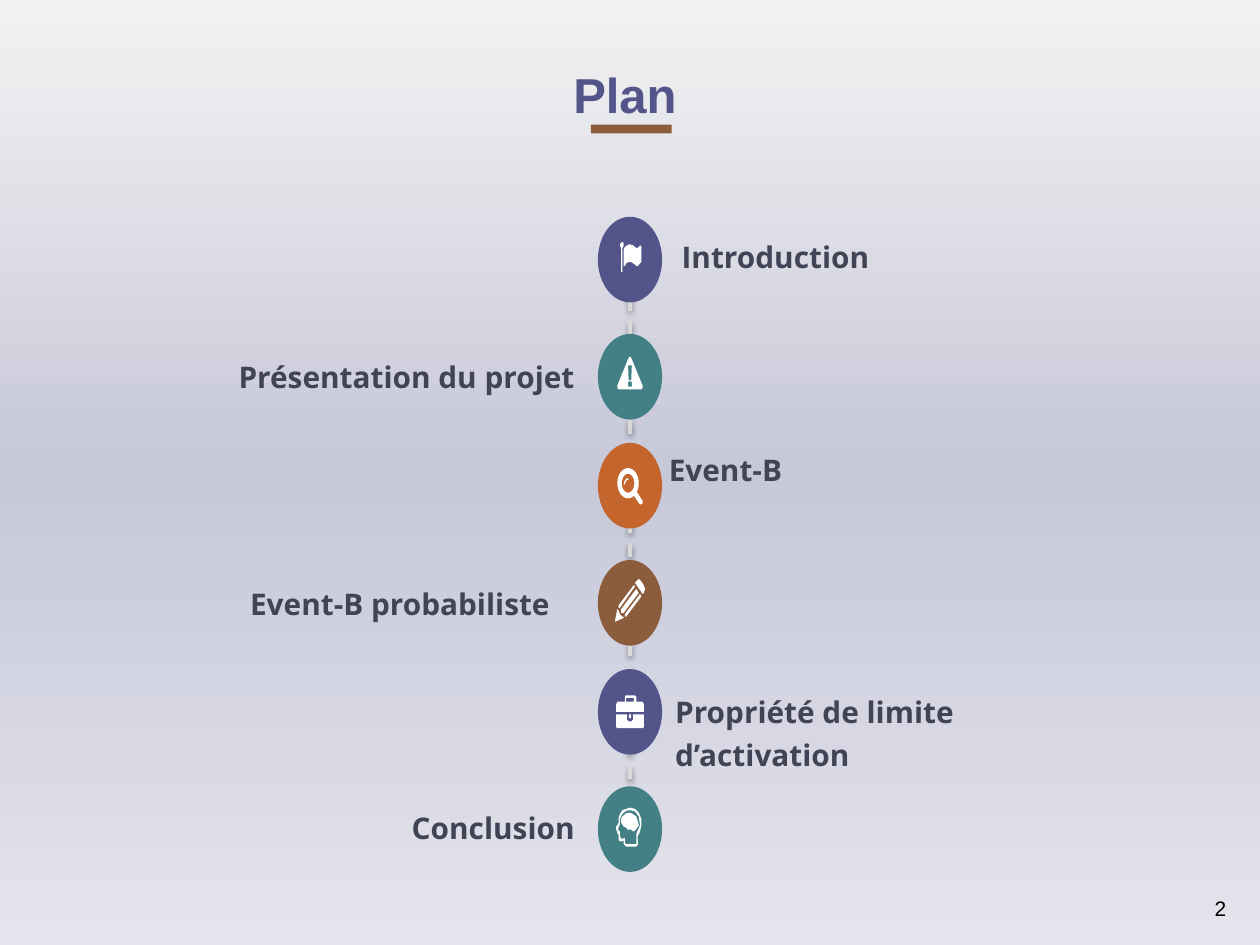
from copy import deepcopy
from dataclasses import dataclass
from math import cos, pi, sin

from lxml.etree import fromstring
from pptx import Presentation
from pptx.dml.color import RGBColor
from pptx.enum.dml import MSO_LINE
from pptx.enum.shapes import MSO_CONNECTOR, MSO_SHAPE
from pptx.enum.text import MSO_ANCHOR as Anchor, MSO_AUTO_SIZE as AutoSize, PP_ALIGN as Align
from pptx.util import Inches, Pt

Points = list[tuple[float, float]]


@dataclass(frozen=True)
class Theme:
    indigo: str = "53548A"
    teal: str = "438086"
    orange: str = "C4652D"
    brown: str = "8B5D3D"
    ink: str = "424456"
    rail: str = "D9D9D9"
    white: str = "FFFFFF"
    black: str = "000000"
    background: tuple = ((0, "F2F2F2"), (0.5, "C7C8D9"), (1, "E4E4EC"))
    heading_font: str = "Arial"
    label_font: str = "Open Sans"
    title_size: int = 28
    label_size: int = 17
    number_size: int = 12


@dataclass(frozen=True)
class Area:
    """A place on the grid of 100 columns by 75 rows."""
    column: float
    row: float
    columns: float
    rows: float

    def lengths(self) -> list[int]:
        return [grid(n) for n in (self.column, self.row, self.columns, self.rows)]


@dataclass(frozen=True)
class Step:
    text: str
    color: str
    area: Area
    align: Align
    icon: list[Points]


THEME = Theme()
CENTRE = 50
DISC_WIDTH, DISC_HEIGHT = 5.1, 6.8
FIRST_DISC, PAIR_PITCH, PARTNER_GAP = 17.2, 17.95, 9.3


def grid(cells: float) -> int:
    return Inches(cells / 10)


def rectangle(left: float, top: float, right: float, bottom: float) -> Points:
    return [(left, top), (right, top), (right, bottom), (left, bottom)]


def ellipse(x: float, y: float, x_radius: float, y_radius: float, count: int = 28) -> Points:
    angles = [2 * pi * i / count for i in range(count)]
    return [(x + x_radius * cos(a), y + y_radius * sin(a)) for a in angles]


# Icon outlines, in hundredths of an inch from the disc centre
FLAG = [
    [(-5, -11), (-6, -9), (-6, 10), (-7, 10), (-7, -9), (-8, -11), (-7.5, -13), (-6, -14), (-5, -13)],
    [(8, -11), (9, -11), (9, 2), (8, 3), (6.5, 5), (5, 5), (4, 4), (2.5, 3), (1, 2), (-1, 2),
     (-3, 3), (-4, 5), (-5, 5), (-5, -8), (-4, -10), (-1, -12), (0, -12), (2, -11.5),
     (4, -10), (5, -9), (6.5, -9.5)],
]
WARNING = [
    [(0, -16), (1, -15), (10, 7), (10, 9), (9, 10), (-9, 10), (-10, 9), (-10, 7), (-1, -15)],
    [(-1.5, -9), (1.5, -9), (1, 3), (-1, 3)],
    rectangle(-1.5, 4, 1.5, 8),
]
LENS = [
    ellipse(-1.5, -2, 8.5, 12),
    ellipse(-1.5, -2, 5, 7.5),
    [(3.3, 8.2), (5.7, 5.2), (10, 12), (10, 14), (8, 15)],
    [(-2, -6), (-1, -5), (-3, -4), (-4, -1), (-5, -1), (-4, -4.5)],
]
PENCIL = [
    [(11, -8), (10, -7), (4, -16), (5, -17), (7, -19), (9, -17), (11, -14), (12, -11)],
    [(-4, 9), (-4, 11), (-3, 11), (9, -5), (8, -7)],
    [(-9, 2), (-9, 4), (-8, 4), (4, -13), (3, -14)],
    [(5, -11), (-7, 5), (-7, 8), (-5, 8), (7, -8)],
    [(-5, 12), (-5, 11), (-6, 11), (-8, 9), (-9, 6), (-10, 5), (-12, 15)],
]
BRIEFCASE = [
    [(-11, 0), (-11, -6), (-10, -8), (-4, -8), (-4, -12), (-3.5, -13), (4, -13), (5, -12),
     (5, -8), (10, -8), (11, -6), (11, 0)],
    rectangle(-3, -11, 3, -8),
    [(11, 2), (11, 12), (10, 13), (-10, 13), (-11, 12), (-11, 2), (-2.5, 2), (-2.5, 6),
     (-1, 7.5), (1, 7.5), (2.5, 6), (2.5, 2)],
    rectangle(-1, 2, 1, 5),
]
HEAD = [
    [(7, -13), (4, -16), (0, -17), (-6, -15), (-8, -12), (-9, -9), (-9, -5), (-10, -3), (-11, -2),
     (-11, 0), (-10, 3), (-9, 5), (-9, 9), (-7, 10), (-5, 9), (-5, 12), (-3, 14), (5, 14),
     (6.5, 12), (6, 6), (8, 2), (9, -3), (9, -8)],
    [(8, -3), (5, 4), (5, 12), (-3, 12), (-4, 11), (-4, 7), (-7, 8), (-8, 5), (-8, 2), (-9, 1),
     (-9.5, 0), (-8, -4), (-8, -8), (-6, -12), (-3, -14.5), (0, -15), (4, -14), (7, -10)],
    [(2, -12), (0, -13), (-3, -12.5), (-6, -10), (-7, -8), (-7, -5), (-5, -2), (-3, -1), (-1, 1),
     (0, 0), (3, 2), (5, 0), (7, -3), (6, -7), (5, -10)],
]

STEPS = [
    Step("Introduction", THEME.indigo, Area(53.1, 16.2, 23.6, 8.3), Align.LEFT, FLAG),
    Step("Présentation du projet", THEME.teal, Area(16.9, 27.4, 29.7, 4.3), Align.RIGHT, WARNING),
    Step("Event-B", THEME.orange, Area(52.1, 34.8, 29.7, 4.1), Align.LEFT, LENS),
    Step("Event-B probabiliste", THEME.brown, Area(16.9, 45.4, 29.7, 4.1), Align.CENTER, PENCIL),
    Step("Propriété de limite d’activation", THEME.indigo, Area(52.6, 54, 29.7, 7.9), Align.LEFT, BRIEFCASE),
    Step("Conclusion", THEME.teal, Area(16.9, 63.2, 29.7, 4.1), Align.RIGHT, HEAD),
]


def paint(shape, color: str) -> None:
    shape.fill.solid()
    shape.fill.fore_color.rgb = RGBColor.from_string(color)
    shape.line.fill.background()
    shape.shadow.inherit = False


def write(box, area: Area, text: str, font: str, size: int, color: str, bold: bool = True,
          align: Align = Align.LEFT, anchor: Anchor = Anchor.TOP, spacing: float = 1.0,
          fit: AutoSize = AutoSize.NONE) -> None:
    box.left, box.top, box.width, box.height = area.lengths()
    frame = box.text_frame
    frame.text = text
    frame.word_wrap, frame.auto_size, frame.vertical_anchor = True, fit, anchor
    para = frame.paragraphs[0]
    para.alignment, para.line_spacing, para.space_before = align, spacing, Pt(0)
    span = para.runs[0].font
    span.name, span.size, span.bold = font, Pt(size), bold
    span.color.rgb = RGBColor.from_string(color)


def draw_background(page) -> None:
    fill = page.background.fill
    fill.gradient()
    fill.gradient_angle = 270
    stop_list = page._element.xpath(".//a:gsLst")[0]
    stop_list.append(deepcopy(stop_list[0]))
    for stop, (position, color) in zip(fill.gradient_stops, THEME.background):
        stop.position = position
        stop.color.rgb = RGBColor.from_string(color)


def draw_rail(page) -> None:
    rail = page.shapes.add_connector(
        MSO_CONNECTOR.STRAIGHT, grid(CENTRE), grid(21.6), grid(CENTRE), grid(64.5))
    rail.line.color.rgb = RGBColor.from_string(THEME.rail)
    rail.line.width, rail.line.dash_style = Pt(2), MSO_LINE.DASH
    rail._element.spPr.append(fromstring(
        '<a:effectLst xmlns:a="http://schemas.openxmlformats.org/drawingml/2006/main">'
        f'<a:outerShdw blurRad="{Pt(3.1)}" dist="{Pt(1.6)}" dir="5400000" rotWithShape="0">'
        f'<a:srgbClr val="{THEME.black}"><a:alpha val="38000"/></a:srgbClr>'
        '</a:outerShdw></a:effectLst>'))


def draw_icon(page, contours: list[Points], middle: float) -> None:
    placed = [[(grid(CENTRE + x / 10), grid(middle + y / 10)) for x, y in contour]
              for contour in contours]
    builder = page.shapes.build_freeform(*placed[0][0])
    for contour in placed:
        builder.move_to(*contour[0])
        builder.add_line_segments(contour[1:], close=True)
    paint(builder.convert_to_shape(), THEME.white)


def draw_disc(page, step: Step, index: int) -> None:
    pair, partner = divmod(index, 2)
    top = FIRST_DISC + pair * PAIR_PITCH + partner * PARTNER_GAP
    area = Area(CENTRE - DISC_WIDTH / 2, top, DISC_WIDTH, DISC_HEIGHT)
    paint(page.shapes.add_shape(MSO_SHAPE.OVAL, *area.lengths()), step.color)
    draw_icon(page, step.icon, top + DISC_HEIGHT / 2)


def main() -> None:
    deck = Presentation()
    deck.slide_width, deck.slide_height = grid(100), grid(75)
    page = deck.slides.add_slide(deck.slide_layouts[0])
    draw_background(page)

    # Title and its underline
    write(page.shapes.title, Area(44.5, 3.6, 11, 6.8), "Plan", THEME.heading_font, THEME.title_size,
          THEME.indigo, anchor=Anchor.BOTTOM, spacing=0.95)
    underline = Area(46.9, 9.9, 6.4, 0.7)
    paint(page.shapes.add_shape(MSO_SHAPE.RECTANGLE, *underline.lengths()), THEME.brown)

    # Timeline: the first label is the subtitle placeholder
    draw_rail(page)
    for index, step in enumerate(STEPS):
        draw_disc(page, step, index)
        if index == 0:
            write(page.placeholders[1], step.area, step.text, THEME.label_font, THEME.label_size,
                  THEME.ink, anchor=Anchor.MIDDLE)
        else:
            write(page.shapes.add_textbox(*step.area.lengths()), step.area, step.text, THEME.label_font,
                  THEME.label_size, THEME.ink, align=step.align, spacing=1.2, fit=AutoSize.SHAPE_TO_FIT_TEXT)

    # Page number
    number = Area(68.1, 70.7, 30.2, 2.7)
    write(page.shapes.add_textbox(*number.lengths()), number, "2", THEME.heading_font, THEME.number_size,
          THEME.black, bold=False, align=Align.RIGHT, anchor=Anchor.MIDDLE)
    deck.save("out.pptx")


if __name__ == "__main__":
    main()
